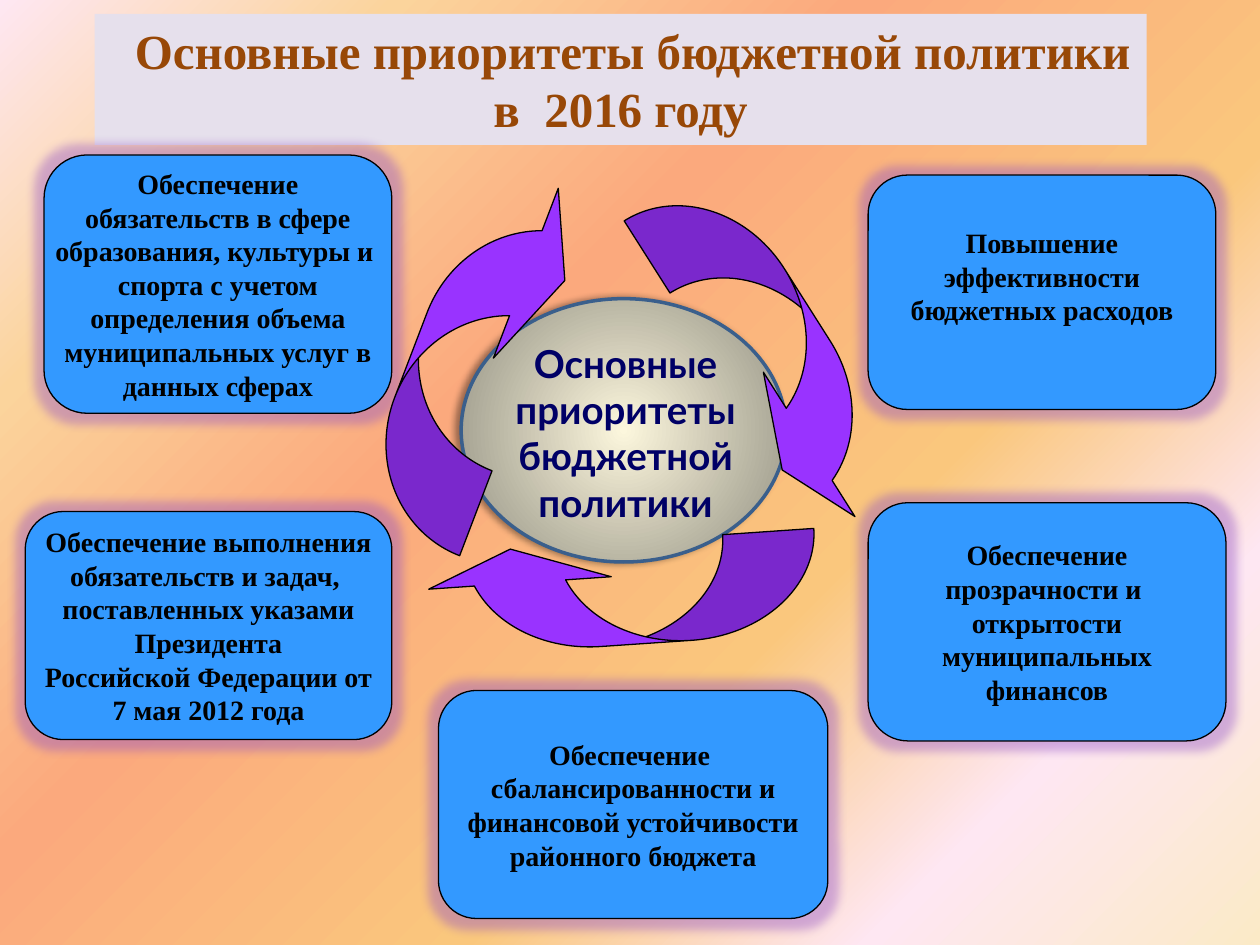
from dataclasses import dataclass

from lxml.etree import SubElement
from pptx import Presentation
from pptx.dml.color import RGBColor
from pptx.enum.shapes import MSO_SHAPE
from pptx.enum.text import MSO_ANCHOR, PP_ALIGN
from pptx.oxml import parse_xml
from pptx.oxml.ns import nsdecls, qn
from pptx.util import Emu, Inches, Pt

COLORS = {
    "title_band": "E6E0EC", "title": "984807", "hub_text": "000066",
    "hub_line": "3A5F8C", "box": "3399FF", "arrow": "9933FF",
    "ink": "000000", "glow": "8E4EC6",
}
BACKGROUND_STOPS = [(0, "FBEAC7"), (18, "FEE7F2"), (36, "FAC77D"),
                    (61, "FBA97D"), (82, "FBD49C"), (100, "FEE7F2")]
HUB_STOPS = [(0, "FCF7DD"), (100, "918E81")]
SERIF, SANS = "Times New Roman", "Lato"

prs = Presentation()
prs.slide_width, prs.slide_height = Inches(10), Inches(7.5)
COLUMN, ROW = prs.slide_width / 100, prs.slide_height / 75


@dataclass(frozen=True)
class Area:
    """A place on a grid of 100 columns and 75 rows."""
    column: float
    row: float
    columns: float
    rows: float

    def lengths(self) -> list[Emu]:
        return [Emu(round(self.column * COLUMN)), Emu(round(self.row * ROW)),
                Emu(round(self.columns * COLUMN)), Emu(round(self.rows * ROW))]


@dataclass(frozen=True)
class Priority:
    area: Area
    lines: list[str]
    lift: float = 0  # extra space under the text, in inches


@dataclass(frozen=True)
class CycleArrow:
    area: Area
    rotation: float
    shaft: float


PRIORITIES = [
    Priority(Area(3.5, 12.3, 27.6, 20.5),
             ["Обеспечение", "обязательств в сфере", "образования, культуры и ",
              "спорта с учетом", "определения объема",
              "муниципальных услуг в", "данных сферах"]),
    Priority(Area(34.8, 54.8, 30.9, 18.1),
             ["Обеспечение ", "сбалансированности и",
              "финансовой устойчивости", "районного бюджета"]),
    Priority(Area(2, 40.6, 29.1, 18.1),
             ["Обеспечение выполнения", "обязательств и задач, ",
              "поставленных указами", "Президента",
              "Российской Федерации от", "7 мая 2012 года"]),
    Priority(Area(68.9, 39.9, 28.4, 18.9),
             ["Обеспечение", "прозрачности и ", "открытости",
              "муниципальных", "финансов"]),
    Priority(Area(68.9, 13.9, 27.6, 18.6),
             ["Повышение", "эффективности", "бюджетных расходов"], lift=0.26),
]
CYCLE = [
    CycleArrow(Area(22.3, 23.5, 30.6, 9.3), 290.9, 0.776),
    CycleArrow(Area(33.5, 43, 31.4, 8.2), 176.1, 0.885),
    CycleArrow(Area(46.2, 23.6, 30.2, 8.7), 57.6, 0.78),
]


def radial_fill(stops: list[tuple[int, str]], focus: dict[str, int]):
    marks = "".join(f'<a:gs pos="{pos * 1000}"><a:srgbClr val="{color}"/></a:gs>'
                    for pos, color in stops)
    sides = " ".join(f'{side}="{share * 1000}"' for side, share in focus.items())
    return parse_xml(
        f'<a:gradFill {nsdecls("a")} rotWithShape="1"><a:gsLst>{marks}</a:gsLst>'
        f'<a:path path="circle"><a:fillToRect {sides}/></a:path></a:gradFill>')


def swap_fill(properties, gradient) -> None:
    old = properties.find(qn("a:solidFill"))
    properties.replace(old, gradient)


def add_effect(shape, kind: str, color: str, alpha: int, **settings) -> None:
    effects = shape._element.spPr.find(qn("a:effectLst"))
    effect = SubElement(effects, qn(f"a:{kind}"),
                        {key: str(value) for key, value in settings.items()})
    tint = SubElement(effect, qn("a:srgbClr"), val=COLORS[color])
    SubElement(tint, qn("a:alpha"), val=str(alpha * 1000))


def add_figure(slide, preset: MSO_SHAPE, area: Area, fill: str,
               line: str | None = None, width: float = 0.75):
    shape = slide.shapes.add_shape(preset, *area.lengths())
    shape.shadow.inherit = False
    shape.fill.solid()
    shape.fill.fore_color.rgb = RGBColor.from_string(COLORS[fill])
    if line:
        shape.line.color.rgb = RGBColor.from_string(COLORS[line])
        shape.line.width = Pt(width)
    else:
        shape.line.fill.background()
    return shape


def write(shape, lines: list[str], *, size: float, font: str, color: str,
          anchor: MSO_ANCHOR = MSO_ANCHOR.TOP, wrap: bool = True) -> None:
    frame = shape.text_frame
    frame.word_wrap, frame.vertical_anchor = wrap, anchor
    for index, line in enumerate(lines):
        paragraph = frame.add_paragraph() if index else frame.paragraphs[0]
        paragraph.alignment = PP_ALIGN.CENTER
        run = paragraph.add_run()
        run.text = line
        run.font.size, run.font.name, run.font.bold = Pt(size), font, True
        run.font.color.rgb = RGBColor.from_string(COLORS[color])


def draw_priority(slide, priority: Priority) -> None:
    box = add_figure(slide, MSO_SHAPE.ROUNDED_RECTANGLE, priority.area, "box", "ink")
    box.adjustments[0] = 0.167
    add_effect(box, "glow", "glow", 40, rad=Pt(11))
    box.text_frame.margin_bottom = Inches(0.05 + priority.lift)
    write(box, priority.lines, size=16, font=SERIF, color="ink",
          anchor=MSO_ANCHOR.MIDDLE, wrap=False)


def draw_arrow(slide, arrow: CycleArrow) -> None:
    shape = add_figure(slide, MSO_SHAPE.CURVED_DOWN_ARROW, arrow.area, "arrow", "ink")
    for index, value in enumerate((arrow.shaft, 2 * arrow.shaft, 0.333)):
        shape.adjustments[index] = value
    shape.rotation = arrow.rotation


def main() -> None:
    slide = prs.slides.add_slide(prs.slide_layouts[6])

    # Background
    slide.background.fill.solid()
    swap_fill(slide._element.cSld.find(qn("p:bg")).find(qn("p:bgPr")),
              radial_fill(BACKGROUND_STOPS, {"l": 100, "t": 100}))

    # Hub of the cycle
    hub = add_figure(slide, MSO_SHAPE.OVAL, Area(36.6, 23.7, 25.8, 20.9),
                     "title_band", "hub_line", 2)
    swap_fill(hub._element.spPr,
              radial_fill(HUB_STOPS, dict.fromkeys("ltrb", 50)))
    add_effect(hub, "outerShdw", "ink", 40, blurRad=Pt(4), dist=Pt(3),
               dir=180 * 60000, algn="ctr", rotWithShape=0)

    # Title
    title = add_figure(slide, MSO_SHAPE.RECTANGLE, Area(7.5, 1.1, 83.5, 10.4),
                       "title_band")
    write(title, ["Основные приоритеты бюджетной политики ", "в  2016 году"],
          size=28, font=SERIF, color="title")
    first_line = title.text_frame.paragraphs[0]._p.get_or_add_pPr()
    first_line.set("marL", str(Inches(0.19)))

    # Hub label
    label = slide.shapes.add_textbox(*Area(39.8, 26.5, 19.7, 15.8).lengths())
    write(label, ["Основные", "приоритеты", "бюджетной", "политики"],
          size=22, font=SANS, color="hub_text")

    # Priorities and the arrows between them
    for priority in PRIORITIES:
        draw_priority(slide, priority)
    for arrow in CYCLE:
        draw_arrow(slide, arrow)

    prs.save("out.pptx")


if __name__ == "__main__":
    main()
